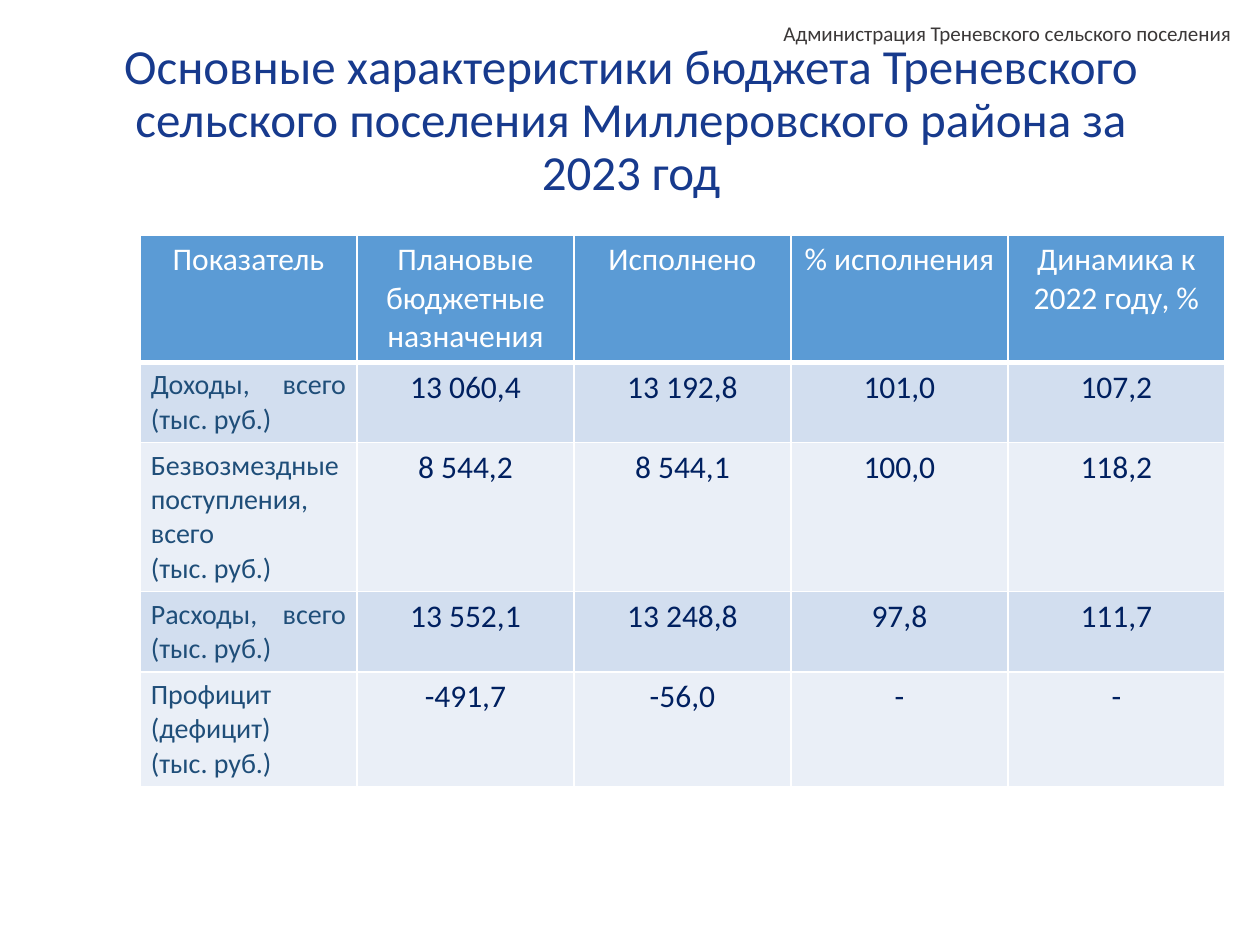
from dataclasses import dataclass

from lxml import etree
from pptx import Presentation
from pptx import util as u
from pptx.dml.color import RGBColor
from pptx.enum import text
from pptx.oxml import ns

EMU_PER_PX = 914400 / 126
ALIGN = text.PP_ALIGN


@dataclass(frozen=True)
class Style:
    size: int
    color: str
    align: ALIGN
    spacing: float = 1.0


@dataclass(frozen=True)
class Indicator:
    label: str
    values: tuple[str, ...]


TITLE = Style(28, "173A8D", ALIGN.CENTER, 0.9)
AUTHORITY = Style(12, "3B3838", ALIGN.RIGHT)
HEADING = Style(18, "FFFFFF", ALIGN.CENTER)
LABEL = Style(16, "1F4E79", ALIGN.JUSTIFY)
VALUE = Style(18, "002060", ALIGN.CENTER)
HEADING_FILL = "5B9BD5"
BAND_FILLS = ("D2DEEF", "EAEFF7")

HEADINGS = (
    "Показатель",
    "Плановые бюджетные назначения",
    "Исполнено",
    "% исполнения",
    "Динамика к 2022 году, %",
)
INDICATORS = (
    Indicator("Доходы, всего (тыс. руб.)", ("13 060,4", "13 192,8", "101,0", "107,2")),
    Indicator(
        "Безвозмездные поступления, всего\n(тыс. руб.)",
        ("8 544,2", "8 544,1", "100,0", "118,2"),
    ),
    Indicator("Расходы, всего (тыс. руб.)", ("13 552,1", "13 248,8", "97,8", "111,7")),
    Indicator("Профицит (дефицит)\n(тыс. руб.)", ("-491,7", "-56,0", "-", "-")),
)


def px(length: int) -> u.Emu:
    return u.Emu(round(length * EMU_PER_PX))


def rgb(value: str) -> RGBColor:
    return RGBColor.from_string(value)


def apply(target, formats: dict) -> None:
    for attribute, value in formats.items():
        setattr(target, attribute, value)


def write(frame, wording: str, style: Style) -> None:
    frame.text = wording
    for paragraph in frame.paragraphs:
        apply(paragraph, {"alignment": style.align, "line_spacing": style.spacing})
        for run in paragraph.runs:
            apply(run.font, {"name": "Calibri", "size": u.Pt(style.size), "bold": False})
            run.font.color.rgb = rgb(style.color)


def place(shape, left: int, top: int, width: int, height: int) -> None:
    apply(
        shape,
        {"left": px(left), "top": px(top), "width": px(width), "height": px(height)},
    )


def add_borders(cell, top: int, bottom: int) -> None:
    properties = cell._tc.get_or_add_tcPr()
    for side, points in {"L": 1, "R": 1, "T": top, "B": bottom}.items():
        border = etree.SubElement(
            properties, ns.qn(f"a:ln{side}"), w=str(u.Pt(points))
        )
        fill = etree.SubElement(border, ns.qn("a:solidFill"))
        etree.SubElement(fill, ns.qn("a:srgbClr"), val="FFFFFF")


def fill_cell(cell, wording: str, style: Style, fill: str, top: int, bottom: int) -> None:
    margins = {
        "margin_left": px(11),
        "margin_right": px(11),
        "margin_top": px(6),
        "margin_bottom": px(6),
    }
    apply(cell, margins)
    add_borders(cell, top, bottom)
    cell.fill.solid()
    cell.fill.fore_color.rgb = rgb(fill)
    write(cell.text_frame, wording, style)


def add_budget(slide) -> None:
    frame = slide.shapes.add_table(
        len(INDICATORS) + 1, len(HEADINGS), px(140), px(235), px(1085), px(546)
    )
    budget = frame.table
    for column in budget.columns:
        column.width = px(217)
    for row in budget.rows:
        row.height = px(52)
    for column, heading in enumerate(HEADINGS):
        fill_cell(budget.cell(0, column), heading, HEADING, HEADING_FILL, 1, 3)
    for row, indicator in enumerate(INDICATORS, 1):
        fill = BAND_FILLS[(row - 1) % 2]
        top = 3 if row == 1 else 1
        for column, wording in enumerate((indicator.label, *indicator.values)):
            style = VALUE if column else LABEL
            fill_cell(budget.cell(row, column), wording, style, fill, top, 1)


def main() -> None:
    deck = Presentation()
    apply(deck, {"slide_width": px(1260), "slide_height": px(945)})
    slide = deck.slides.add_slide(deck.slide_layouts[5])
    middle = {
        "word_wrap": True,
        "auto_size": text.MSO_AUTO_SIZE.NONE,
        "vertical_anchor": text.MSO_ANCHOR.MIDDLE,
    }

    title = slide.shapes.title
    place(title, 91, 54, 1080, 135)
    apply(title.text_frame, middle)
    write(
        title.text_frame,
        "Основные характеристики бюджета Треневского сельского поселения "
        "Миллеровского района за 2023 год",
        TITLE,
    )

    add_budget(slide)

    authority = slide.shapes.add_textbox(px(446), px(18), px(798), px(30))
    apply(authority.text_frame, middle)
    write(
        authority.text_frame,
        "Администрация Треневского сельского поселения",
        AUTHORITY,
    )

    deck.save("out.pptx")


if __name__ == "__main__":
    main()
